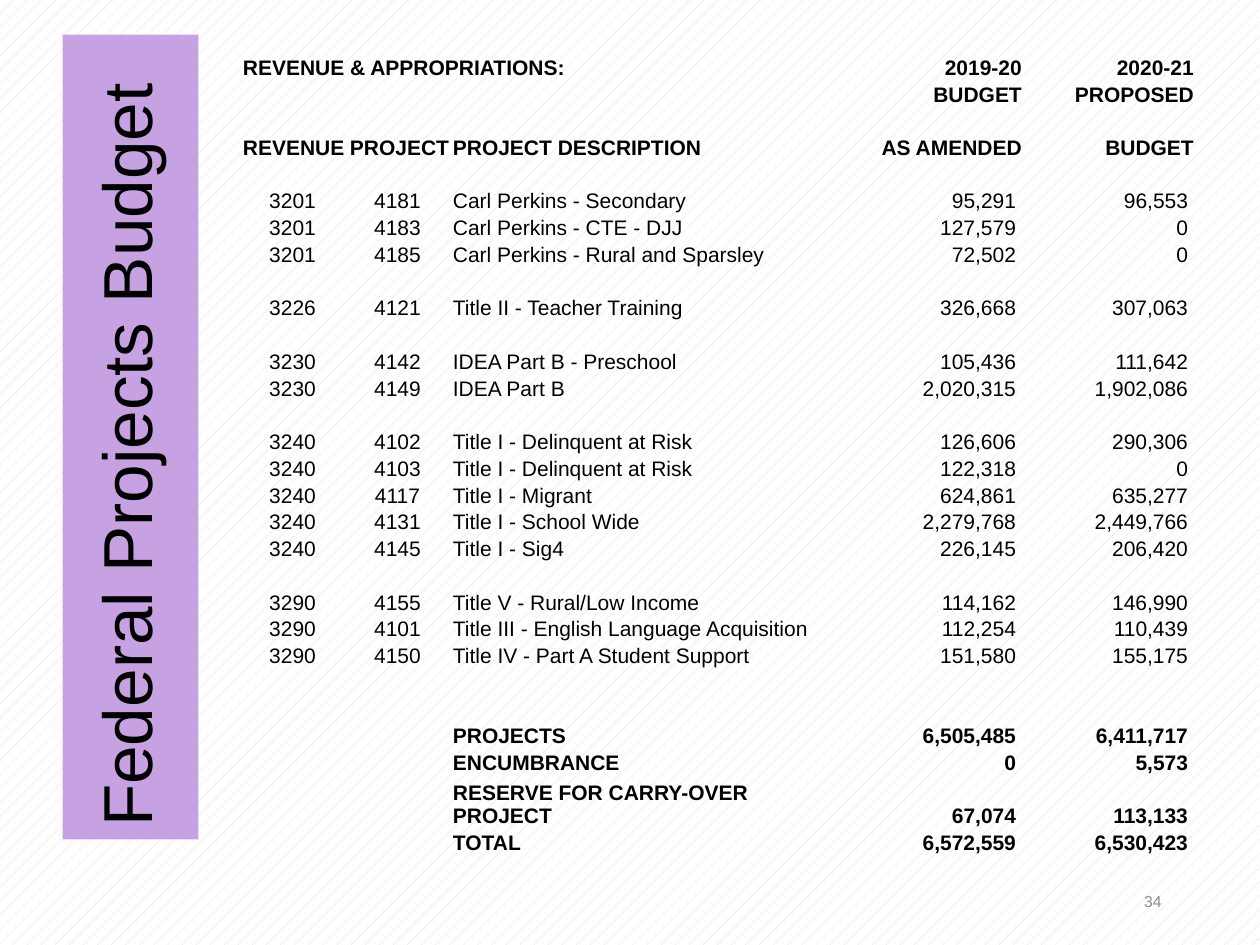
from dataclasses import dataclass

from lxml import etree
from pptx import Presentation
from pptx.dml.color import RGBColor
from pptx.enum.dml import MSO_PATTERN
from pptx.enum.text import MSO_ANCHOR, MSO_AUTO_SIZE, PP_ALIGN
from pptx.oxml.ns import qn
from pptx.slide import Slide
from pptx.table import _Cell
from pptx.text.text import TextFrame
from pptx.util import Pt

LEFT, CENTER, RIGHT = PP_ALIGN.LEFT, PP_ALIGN.CENTER, PP_ALIGN.RIGHT
MIDDLE, BOTTOM = MSO_ANCHOR.MIDDLE, MSO_ANCHOR.BOTTOM
PIXEL = 914400 // 126
NO_STYLE_NO_GRID = "{2D5ABB26-0587-4C30-8999-92F81FD0307C}"


@dataclass(frozen=True)
class Theme:
    font: str = "Arial"
    ink: RGBColor = RGBColor(0, 0, 0)
    muted: RGBColor = RGBColor(0x8C, 0x8C, 0x8C)
    band: RGBColor = RGBColor(0xC7, 0xA2, 0xE3)
    pattern: RGBColor = RGBColor(0xE3, 0xD1, 0xF1)
    paper: RGBColor = RGBColor(0xFF, 0xFF, 0xFF)
    title_size: float = 39.6
    table_size: int = 12
    number_size: int = 9


THEME = Theme()


@dataclass(frozen=True)
class Box:
    left: int
    top: int
    width: int
    height: int

    def emu(self) -> tuple[int, ...]:
        return tuple(px(side) for side in (self.left, self.top, self.width, self.height))


@dataclass(frozen=True)
class BudgetRow:
    revenue: str = ""
    project: str = ""
    description: str = ""
    amended: str = ""
    proposed: str = ""
    lines: int = 1
    kind: str = "item"


def px(length: int) -> int:
    return length * PIXEL


def heading(*texts: str, lines: int = 1) -> BudgetRow:
    return BudgetRow(*texts, lines=lines, kind="heading")


def total(*texts: str, lines: int = 1) -> BudgetRow:
    return BudgetRow("", "", *texts, lines=lines, kind="total")


TITLE_BOX = Box(-272, 369, 805, 136)
NUMBER_BOX = Box(890, 876, 284, 50)
TABLE_BOX = Box(242, 53, 953, 853)
COLUMN_WIDTHS = (107, 103, 393, 178, 20, 152)
LAST_ROW_HEIGHT = 24
GAP = BudgetRow()

ROWS = (
    heading("REVENUE & APPROPRIATIONS:", "", "", "2019-20", "2020-21"),
    heading("", "", "", "BUDGET", "PROPOSED"),
    heading("REVENUE", "PROJECT", "PROJECT DESCRIPTION", "AS AMENDED", "BUDGET", lines=2),
    GAP,
    BudgetRow("3201", "4181", "Carl Perkins - Secondary", "95,291", "96,553"),
    BudgetRow("3201", "4183", "Carl Perkins - CTE - DJJ", "127,579", "0"),
    BudgetRow("3201", "4185", "Carl Perkins - Rural and Sparsley", "72,502", "0"),
    GAP,
    BudgetRow("3226", "4121", "Title II - Teacher Training", "326,668", "307,063"),
    GAP,
    BudgetRow("3230", "4142", "IDEA Part B - Preschool", "105,436", "111,642"),
    BudgetRow("3230", "4149", "IDEA Part B", "2,020,315", "1,902,086"),
    GAP,
    BudgetRow("3240", "4102", "Title I - Delinquent at Risk", "126,606", "290,306"),
    BudgetRow("3240", "4103", "Title I - Delinquent at Risk", "122,318", "0"),
    BudgetRow("3240", "4117", "Title I - Migrant", "624,861", "635,277"),
    BudgetRow("3240", "4131", "Title I - School Wide", "2,279,768", "2,449,766"),
    BudgetRow("3240", "4145", "Title I - Sig4", "226,145", "206,420"),
    GAP,
    BudgetRow("3290", "4155", "Title V - Rural/Low Income", "114,162", "146,990"),
    BudgetRow("3290", "4101", "Title III - English Language Acquisition", "112,254", "110,439"),
    BudgetRow("3290", "4150", "Title IV - Part A Student Support", "151,580", "155,175"),
    GAP,
    GAP,
    total("PROJECTS", "6,505,485", "6,411,717"),
    total("ENCUMBRANCE", "0", "5,573"),
    total("RESERVE FOR CARRY-OVER PROJECT", "67,074", "113,133", lines=2),
    total("TOTAL", "6,572,559", "6,530,423"),
    GAP,
    GAP,
)


def write(frame: TextFrame, text: str, size: float, align: PP_ALIGN,
          color: RGBColor = THEME.ink, bold: bool = False) -> None:
    frame.text = text
    para = frame.paragraphs[0]
    para.alignment = align
    for span in para.runs:
        span.font.name = THEME.font
        span.font.size = Pt(size)
        span.font.bold = bold
        span.font.color.rgb = color


def fill_cell(cell: _Cell, text: str, align: PP_ALIGN, bold: bool) -> None:
    cell.fill.background()
    cell.vertical_anchor = BOTTOM
    cell.margin_left = cell.margin_right = cell.margin_top = px(1)
    cell.margin_bottom = 0
    if text:
        write(cell.text_frame, text, THEME.table_size, align, bold=bold)
    else:
        # An empty cell takes its line height from the end mark.
        end_mark = etree.SubElement(cell.text_frame.paragraphs[0]._p, qn("a:endParaRPr"))
        end_mark.set("sz", str(THEME.table_size * 100))


def add_title(page: Slide) -> None:
    title = page.shapes.title
    title.left, title.top, title.width, title.height = TITLE_BOX.emu()
    title.rotation = 270
    title.fill.solid()
    title.fill.fore_color.rgb = THEME.band
    frame = title.text_frame
    frame.auto_size = MSO_AUTO_SIZE.NONE
    frame.vertical_anchor = MIDDLE
    write(frame, "Federal Projects Budget", THEME.title_size, LEFT)
    frame.paragraphs[0].line_spacing = 0.9


def add_budget_table(page: Slide) -> None:
    table = page.shapes.add_table(len(ROWS), len(COLUMN_WIDTHS), *TABLE_BOX.emu()).table
    table.first_row = table.horz_banding = False
    table._tbl.tblPr.find(qn("a:tableStyleId")).text = NO_STYLE_NO_GRID
    for column, width in zip(table.columns, COLUMN_WIDTHS):
        column.width = px(width)

    # All rows but the last share the height by their number of text lines.
    line_count = sum(row.lines for row in ROWS[:-1])
    line_height = px(TABLE_BOX.height - LAST_ROW_HEIGHT) // line_count
    for index, row in enumerate(ROWS):
        table.rows[index].height = row.lines * line_height
        is_heading = row.kind == "heading"
        code_align = LEFT if is_heading else CENTER
        pad = "" if is_heading else " "
        values = (
            (row.revenue, code_align, pad),
            (row.project, code_align, pad),
            (row.description, LEFT, ""),
            (row.amended, RIGHT, pad),
            ("", LEFT, ""),
            (row.proposed, RIGHT, pad),
        )
        for column_index, (text, align, suffix) in enumerate(values):
            fill_cell(table.cell(index, column_index), text and text + suffix,
                      align, row.kind != "item")
    table.rows[len(ROWS) - 1].height = px(LAST_ROW_HEIGHT)
    table.cell(0, 0).merge(table.cell(0, 2))


def add_page_number(page: Slide) -> None:
    frame = page.shapes.add_textbox(*NUMBER_BOX.emu()).text_frame
    frame.word_wrap = True
    frame.vertical_anchor = MIDDLE
    write(frame, "34", THEME.number_size, RIGHT, THEME.muted)


def main() -> None:
    deck = Presentation()
    deck.slide_width, deck.slide_height = px(1260), px(945)
    page = deck.slides.add_slide(deck.slide_layouts[5])

    # Patterned background
    backdrop = page.background.fill
    backdrop.patterned()
    backdrop.pattern = MSO_PATTERN.PERCENT_10
    backdrop.fore_color.rgb = THEME.pattern
    backdrop.back_color.rgb = THEME.paper

    add_title(page)
    add_page_number(page)
    add_budget_table(page)
    deck.save("out.pptx")


if __name__ == "__main__":
    main()
